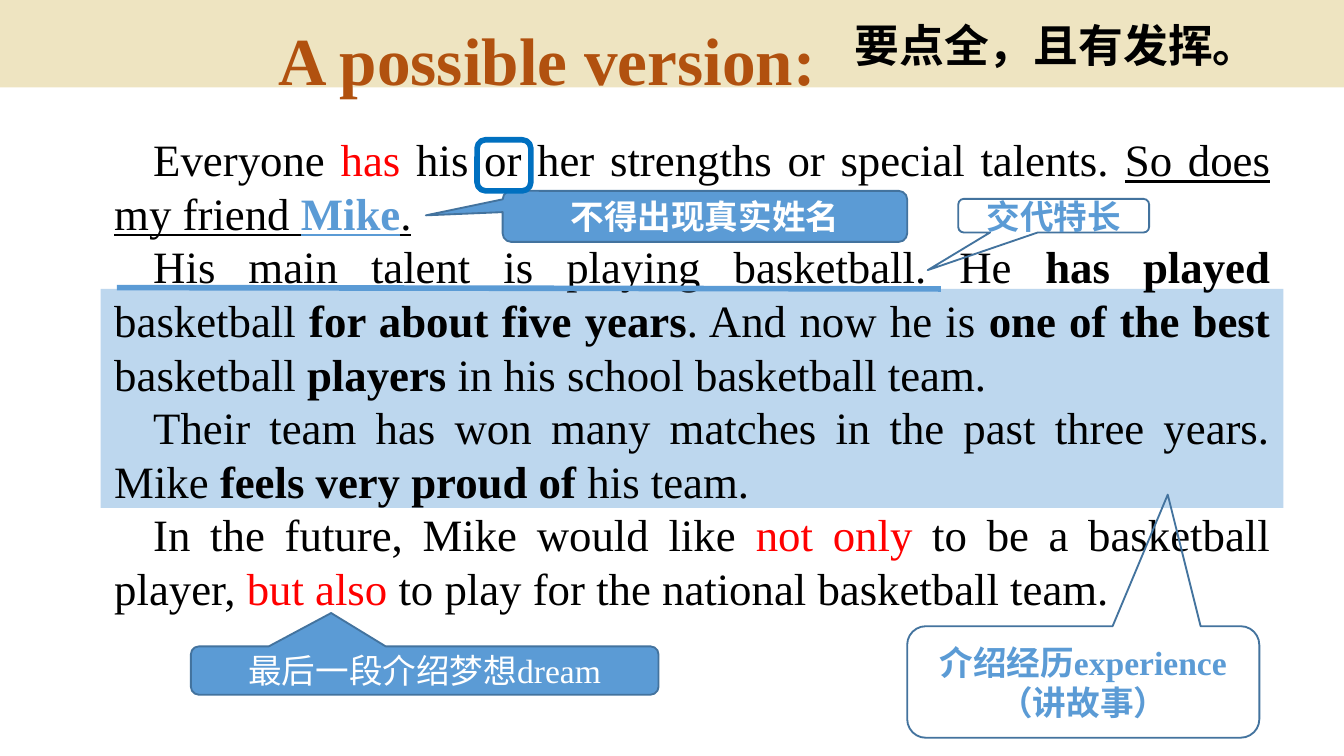
from lxml import etree
from pptx import Presentation
from pptx.dml.color import RGBColor
from pptx.enum import shapes, text
from pptx.oxml import ns
from pptx.util import Inches, Pt

BLACK = RGBColor(0, 0, 0)
WHITE = RGBColor(255, 255, 255)
RED = RGBColor(255, 0, 0)
BLUE = RGBColor(0x5B, 0x9B, 0xD5)
EDGE = RGBColor(0x43, 0x73, 0x9E)
RING = RGBColor(0, 0x70, 0xC0)
PALE = RGBColor(0xBD, 0xD7, 0xEE)
SAND = RGBColor(0xEE, 0xE4, 0xC1)
RUST = RGBColor(0xB1, 0x51, 0x0F)
SERIF = "Times New Roman"

TITLE = "A possible version:"
NOTE = "要点全，且有发挥。"
STYLES = {
    "plain": {},
    "red": {"color": RED},
    "bold": {"bold": True},
    "line": {"under": True},
    "name": {"color": BLUE, "bold": True, "under": True},
}
ESSAY = [
    [("Everyone ", "plain"), ("has", "red"),
     (" his or her strengths or special talents. ", "plain"),
     ("So does my friend ", "line"), ("Mike", "name"), (".", "line")],
    [("His main talent is playing basketball. He ", "plain"),
     ("has played", "bold"), (" basketball ", "plain"),
     ("for about five years", "bold"), (". And now he is ", "plain"),
     ("one of the best ", "bold"), ("basketball", "plain"),
     (" players", "bold"), (" in his school basketball team.", "plain")],
    [("Their team has won many matches in the past three years. Mike ", "plain"),
     ("feels very proud of", "bold"), (" his team.", "plain")],
    [("In the future, Mike would like ", "plain"), ("not only", "red"),
     (" to be a basketball player, ", "plain"), ("but also", "red"),
     (" to play for the national basketball team.", "plain")],
]
CALLS = [
    ("不得出现真实姓名", (3.74, 1.42, 3.01, 0.38), (-0.69, -0.02), BLUE, WHITE, True),
    ("交代特长", (7.13, 1.48, 1.42, 0.25), (-0.66, 1.62), None, BLUE, True),
    ("介绍经历experience（讲故事）", (6.75, 4.66, 2.62, 0.83), (0.24, -1.68), None, BLUE, True),
    ("最后一段介绍梦想dream", (1.42, 4.81, 3.48, 0.36), (-0.2, -1.19), BLUE, WHITE, False),
]


def place(shape, box):
    shape.left, shape.top, shape.width, shape.height = map(Inches, box)


def paint(shape, fill=None, edge=None, width=1):
    if fill is None:
        shape.fill.background()
    else:
        shape.fill.solid()
        shape.fill.fore_color.rgb = fill
    if edge is None:
        shape.line.fill.background()
    else:
        shape.line.color.rgb = edge
        shape.line.width = Pt(width)


def add_run(para, words, size, color=BLACK, bold=False, under=False, face=SERIF):
    run = para.add_run()
    run.text = words
    font = run.font
    font.name, font.size = face, Pt(size)
    font.bold, font.underline = bold, under
    font.color.rgb = color


def add_shape(slide, kind, box, fill=None, edge=None, width=1):
    shape = slide.shapes.add_shape(kind, *map(Inches, box))
    shape.shadow.inherit = False
    paint(shape, fill, edge, width)
    return shape


def add_title(slide):
    title = slide.shapes.title
    place(title, (0, 0, 10, 0.65))
    paint(title, SAND)
    frame = title.text_frame
    frame.auto_size = text.MSO_AUTO_SIZE.NONE
    frame.vertical_anchor = text.MSO_ANCHOR.MIDDLE
    frame.margin_left, frame.margin_top = Inches(2.07), Inches(0.3)
    frame.margin_right, frame.margin_bottom = Inches(0.1), 0
    para = frame.paragraphs[0]
    para.alignment = text.PP_ALIGN.LEFT
    para.line_spacing = 0.9
    add_run(para, TITLE, 36, RUST, bold=True)


def add_essay(slide):
    body = slide.placeholders[1]
    place(body, (0.75, 0.93, 8.8, 3.73))
    frame = body.text_frame
    frame.auto_size = text.MSO_AUTO_SIZE.NONE
    for i, parts in enumerate(ESSAY):
        para = frame.add_paragraph() if i else frame.paragraphs[0]
        para.alignment = text.PP_ALIGN.JUSTIFY
        para.space_before = para.space_after = Pt(0)
        para.line_spacing = Pt(28.75)
        props = para._p.get_or_add_pPr()
        props.set("marL", "0")
        props.set("indent", str(Inches(0.29)))
        etree.SubElement(props, ns.qn("a:buNone"))
        for words, style in parts:
            add_run(para, words, 24, **STYLES[style])


def add_call(slide, words, box, tip, fill, ink, bold):
    kind = shapes.MSO_SHAPE.ROUNDED_RECTANGULAR_CALLOUT
    call = add_shape(slide, kind, box, fill, EDGE)
    call.adjustments[0], call.adjustments[1] = tip
    frame = call.text_frame
    frame.word_wrap = True
    frame.vertical_anchor = text.MSO_ANCHOR.MIDDLE
    para = frame.paragraphs[0]
    para.alignment = text.PP_ALIGN.CENTER
    add_run(para, words, 18, ink, bold)


def add_rule(slide):
    ends = map(Inches, (0.87, 2.14, 7, 2.15))
    rule = slide.shapes.add_connector(shapes.MSO_CONNECTOR.STRAIGHT, *ends)
    rule.line.color.rgb = BLUE
    rule.line.width = Pt(3)
    etree.SubElement(rule._element.spPr, ns.qn("a:effectLst"))


def add_note(slide):
    note = slide.shapes.add_textbox(*map(Inches, (6.26, 0.08, 3.49, 0.5)))
    note.text_frame.word_wrap = True
    add_run(note.text_frame.paragraphs[0], NOTE, 24, bold=True, face="Arial")


def main():
    deck = Presentation()
    deck.slide_width = Inches(10)
    deck.slide_height = deck.slide_width * 9 // 16
    slide = deck.slides.add_slide(deck.slide_layouts[1])
    add_title(slide)
    add_essay(slide)
    band = add_shape(slide, shapes.MSO_SHAPE.RECTANGLE, (0.75, 2.15, 8.8, 1.63), PALE)
    slide.shapes.title._element.addprevious(band._element)
    add_call(slide, *CALLS[0])
    add_shape(slide, shapes.MSO_SHAPE.ROUNDED_RECTANGLE, (3.55, 1.04, 0.4, 0.38), None, RING, 3)
    add_rule(slide)
    for call in CALLS[1:]:
        add_call(slide, *call)
    add_note(slide)
    deck.save("out.pptx")


if __name__ == "__main__":
    main()
